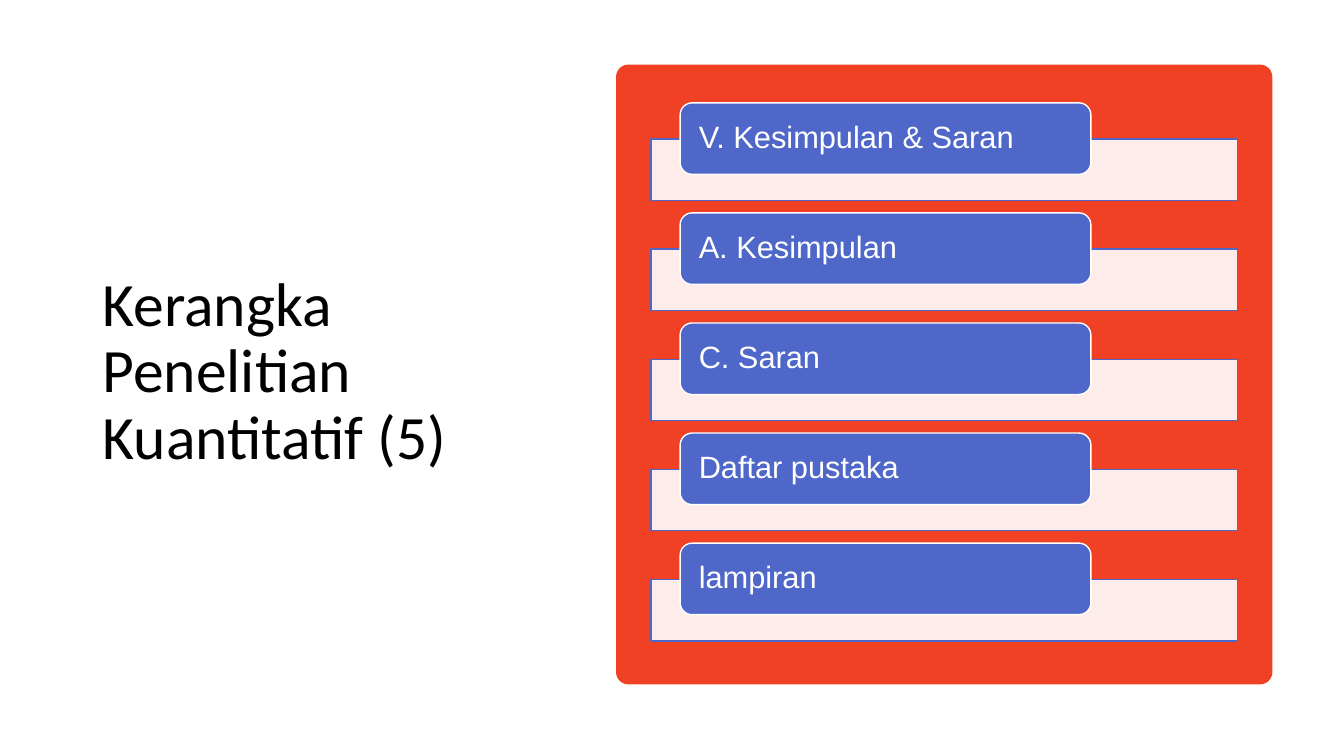
import pptx
import pptx.util
import pptx.dml.color
import pptx.enum.shapes
import pptx.enum.text
from dataclasses import dataclass
from lxml import etree
from pptx.oxml.ns import qn

Inches = pptx.util.Inches
Shape = pptx.enum.shapes.MSO_SHAPE


@dataclass(frozen=True)
class Theme:
    white: str = "FFFFFF"
    black: str = "000000"
    red: str = "F14124"
    blue: str = "4E67C8"
    title_font: str = "Calibri"
    label_font: str = "Arial"
    title_size: int = 44
    label_size: int = 22
    line_width: int = 1
    bar_opacity: int = 90


THEME = Theme()
TITLE = "Kerangka Penelitian Kuantitatif (5)"
SECTIONS = ["V. Kesimpulan & Saran", "A. Kesimpulan", "C. Saran",
            "Daftar pustaka", "lampiran"]


def rgb(color):
    return pptx.dml.color.RGBColor.from_string(color)


def add_block(slide, kind, box, fill, line=None, radius=None):
    block = slide.shapes.add_shape(kind, *map(Inches, box))
    block.shadow.inherit = False
    block.fill.solid()
    block.fill.fore_color.rgb = rgb(fill)
    if line:
        block.line.color.rgb = rgb(line)
        block.line.width = pptx.util.Pt(THEME.line_width)
    else:
        block.line.fill.background()
    if radius is not None:
        block.adjustments[0] = radius
    return block


def write(frame, text, font, size, color):
    frame.word_wrap = True
    frame.vertical_anchor = pptx.enum.text.MSO_ANCHOR.MIDDLE
    frame.text = text
    paragraph = frame.paragraphs[0]
    paragraph.alignment = pptx.enum.text.PP_ALIGN.LEFT
    paragraph.line_spacing = 0.9
    paragraph.font.name = font
    paragraph.font.size = pptx.util.Pt(size)
    paragraph.font.color.rgb = rgb(color)


def set_opacity(block, percent):
    color = block.fill._xPr.find(qn("a:solidFill"))[0]
    etree.SubElement(color, qn("a:alpha"), val=str(percent * 1000))


def add_title(slide, box):
    title = slide.shapes.add_textbox(*map(Inches, box))
    write(title.text_frame, TITLE, THEME.title_font, THEME.title_size, THEME.black)


def add_section(slide, box, text):
    left, top, width, height = box
    bar_height, label_height = 0.61, 0.71
    bar = add_block(slide, Shape.RECTANGLE,
                    (left, top + height - bar_height, width, bar_height),
                    THEME.white, THEME.blue)
    set_opacity(bar, THEME.bar_opacity)
    label = add_block(slide, Shape.ROUNDED_RECTANGLE,
                      (left + 0.05 * width, top, 0.7 * width, label_height),
                      THEME.blue, THEME.white, 0.167)
    frame = label.text_frame
    frame.margin_left = frame.margin_right = Inches(0.15)
    frame.margin_top = frame.margin_bottom = 0
    write(frame, text, THEME.label_font, THEME.label_size, THEME.white)


def add_outline_panel(slide, box):
    left, top, width, height = box
    add_block(slide, Shape.ROUNDED_RECTANGLE, box, THEME.red, radius=0.02)
    margin_x, margin_top, pitch, section_height = 0.345, 0.38, 1.092, 0.97
    for row, text in enumerate(SECTIONS):
        section_box = (left + margin_x, top + margin_top + row * pitch,
                       width - 2 * margin_x, section_height)
        add_section(slide, section_box, text)


def main():
    deck = pptx.Presentation()
    deck.slide_width, deck.slide_height = Inches(13.33), Inches(7.5)
    slide = deck.slides.add_slide(deck.slide_layouts[6])
    slide.background.fill.solid()
    slide.background.fill.fore_color.rgb = rgb(THEME.white)
    add_title(slide, (0.92, 0.96, 4.79, 5.48))
    add_outline_panel(slide, (6.11, 0.64, 6.51, 6.15))
    deck.save("out.pptx")


if __name__ == "__main__":
    main()
